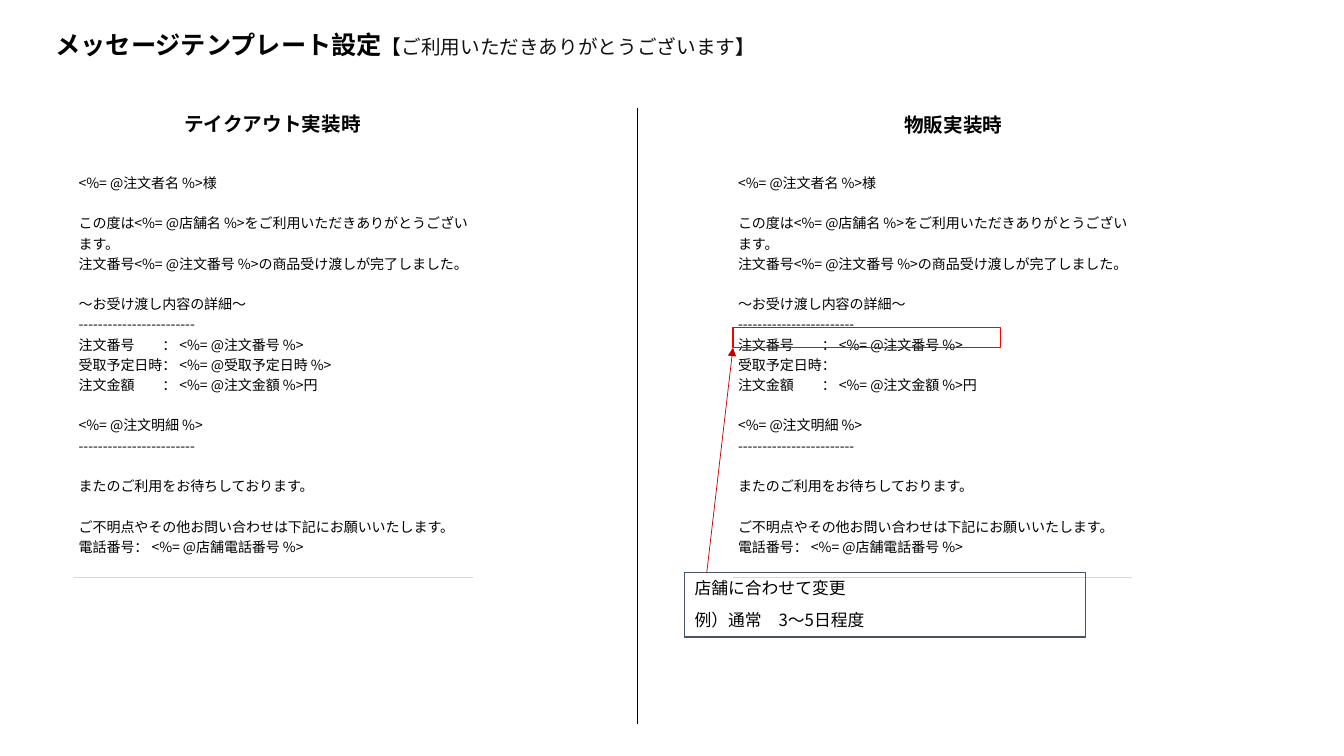
from lxml import etree
from pptx import Presentation
from pptx.dml.color import RGBColor
from pptx.enum.shapes import MSO_CONNECTOR, MSO_SHAPE
from pptx.enum.text import MSO_ANCHOR, MSO_AUTO_SIZE, PP_ALIGN
from pptx.oxml.ns import qn
from pptx.util import Pt

PX = 9144  # 100 px to the inch
STRAIGHT, RECT = MSO_CONNECTOR.STRAIGHT, MSO_SHAPE.RECTANGLE
MIDDLE, TOP, LEFT = MSO_ANCHOR.MIDDLE, MSO_ANCHOR.TOP, PP_ALIGN.LEFT
NO_FIT = MSO_AUTO_SIZE.NONE

BLACK = RGBColor(0x00, 0x00, 0x00)
INK = RGBColor(0x11, 0x11, 0x11)
SLATE = RGBColor(0x44, 0x54, 0x6A)
RED = RGBColor(0xFF, 0x00, 0x00)
DARK_RED = RGBColor(0xC0, 0x00, 0x00)
GREY = RGBColor(0xD8, 0xD8, 0xD8)

CJK, LATO = "Noto Sans CJK JP", "Lato"
BODY_SIZE, BODY_GAP = 10, 14.5  # the gap is one line of body text

RULE = "------------------------"


def message(pickup):
    """Blocks of lines; a gap goes between two blocks."""
    return [
        ["<%= @注文者名 %>様"],
        ["この度は<%= @店舗名 %>をご利用いただきありがとうございます。",
         "注文番号<%= @注文番号 %>の商品受け渡しが完了しました。"],
        ["〜お受け渡し内容の詳細〜",
         RULE,
         "注文番号　　： <%= @注文番号 %>",
         "受取予定日時：" + pickup,
         "注文金額　　： <%= @注文金額 %>円"],
        ["<%= @注文明細 %>", RULE],
        ["またのご利用をお待ちしております。"],
        ["ご不明点やその他お問い合わせは下記にお願いいたします。",
         "電話番号： <%= @店舗電話番号 %>"],
    ]


def px(*lengths):
    return [n * PX for n in lengths]


def add_run(p, text, size, bold=False, color=BLACK, font=CJK):
    r = p.add_run()
    r.text = text
    fmt = {"name": font, "size": Pt(size), "bold": bold}
    for key, value in fmt.items():
        setattr(r.font, key, value)
    r.font.color.rgb = color
    ea = etree.SubElement(r.font._element, qn("a:ea"))
    ea.set("typeface", CJK)


def format_paragraph(p, **fmt):
    for key, value in {"alignment": LEFT, **fmt}.items():
        setattr(p, key, value)


def set_frame(tf, anchor):
    fmt = {"word_wrap": True, "auto_size": NO_FIT, "vertical_anchor": anchor}
    for key, value in fmt.items():
        setattr(tf, key, value)


def set_title(s):
    title = s.shapes.title
    title.left, title.top, title.width, title.height = px(45, 19, 1264, 53)
    set_frame(title.text_frame, MIDDLE)
    p = title.text_frame.paragraphs[0]
    format_paragraph(p, line_spacing=0.9, space_before=Pt(10))
    add_run(p, "メッセージテンプレート設定", 18, bold=True)
    add_run(p, "【", 14, bold=True)
    add_run(p, "ご利用いただきありがとうございます", 14, color=INK, font=LATO)
    add_run(p, "】", 14, bold=True, color=INK, font=LATO)


def add_heading(s, text, x, y):
    sp = s.shapes.add_textbox(*px(x, y, 378, 34))
    set_frame(sp.text_frame, TOP)
    p = sp.text_frame.paragraphs[0]
    format_paragraph(p)
    add_run(p, text, 14, bold=True)


def set_borders(cell):
    """Draw only the bottom border."""
    tc_pr = cell._tc.get_or_add_tcPr()
    for i, side in enumerate(("lnL", "lnR", "lnT", "lnB")):
        ln = etree.Element(qn("a:" + side), w=str(Pt(0.75)))
        if side == "lnB":
            fill = etree.SubElement(ln, qn("a:solidFill"))
            etree.SubElement(fill, qn("a:srgbClr"), val=str(GREY))
        else:
            etree.SubElement(ln, qn("a:noFill"))
        tc_pr.insert(i, ln)


def add_message_table(s, blocks, x):
    tbl = s.shapes.add_table(1, 1, *px(x, 150, 396, 355)).table
    tbl.first_row = tbl.horz_banding = False
    cell = tbl.cell(0, 0)
    cell.fill.background()
    cell.vertical_anchor = MIDDLE
    cell.margin_left, cell.margin_right = px(5, 5)
    cell.margin_top, cell.margin_bottom = px(11, 11)
    set_borders(cell)
    tf = cell.text_frame
    for b, block in enumerate(blocks):
        for i, line in enumerate(block):
            first = b == 0 and i == 0
            p = tf.paragraphs[0] if first else tf.add_paragraph()
            gap = BODY_GAP if b > 0 and i == 0 else 0
            format_paragraph(p, space_before=Pt(gap))
            add_run(p, line, BODY_SIZE)


def add_box(s, x, y, w, h, color, lines=()):
    sp = s.shapes.add_shape(RECT, *px(x, y, w, h))
    sp.shadow.inherit = False
    sp.fill.background()
    sp.line.color.rgb = color
    sp.line.width = Pt(0.75)
    tf = sp.text_frame
    set_frame(tf, MIDDLE)
    for i, line in enumerate(lines):
        p = tf.add_paragraph() if i else tf.paragraphs[0]
        format_paragraph(p, line_spacing=0.9, space_before=Pt(10))
        add_run(p, line, 12)


def add_line(s, x1, y1, x2, y2, color, arrow=False):
    line = s.shapes.add_connector(STRAIGHT, *px(x1, y1, x2, y2))
    line.line.color.rgb = color
    line.line.width = Pt(0.5)
    if arrow:
        ln = line.line._get_or_add_ln()
        etree.SubElement(ln, qn("a:tailEnd"), type="triangle")
    etree.SubElement(line._element.spPr, qn("a:effectLst"))


def main():
    prs = Presentation()
    prs.slide_width, prs.slide_height = px(1333, 750)
    s = prs.slides.add_slide(prs.slide_layouts[5])
    set_title(s)

    # Message templates side by side
    add_message_table(s, message(" <%= @受取予定日時 %>"), 73)
    add_message_table(s, message(""), 727)
    add_line(s, 632, 107, 632, 718, BLACK)

    # Note on the pickup time
    add_box(s, 679, 568, 398, 64, SLATE,
            ["店舗に合わせて変更", "例）通常　3〜5日程度"])
    add_box(s, 727, 325, 265, 20, RED)
    add_line(s, 701, 568, 727, 345, DARK_RED, arrow=True)

    # Column headings
    add_heading(s, "物販実装時", 887, 107)
    add_heading(s, "テイクアウト実装時", 173, 106)

    prs.save("out.pptx")


if __name__ == "__main__":
    main()
